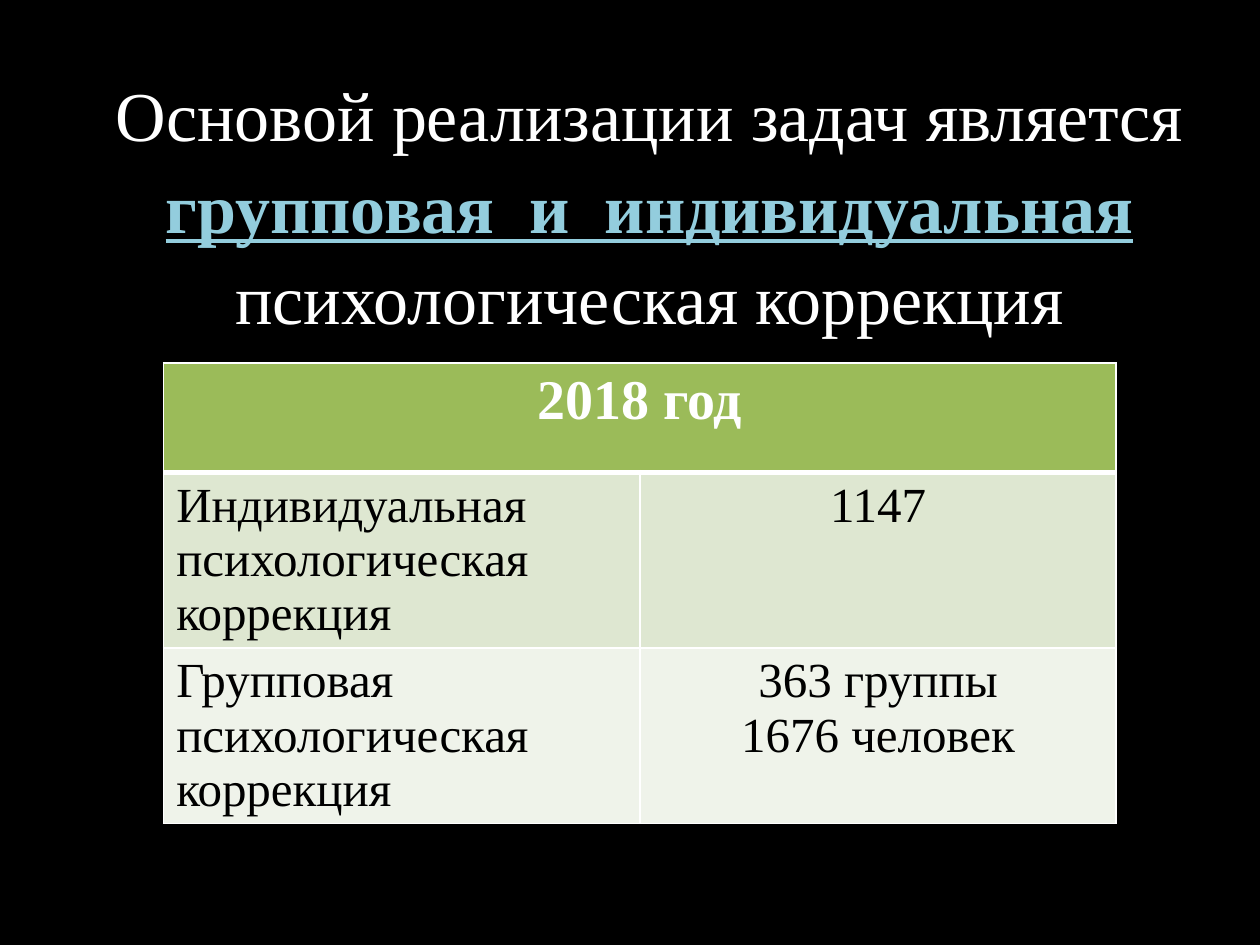
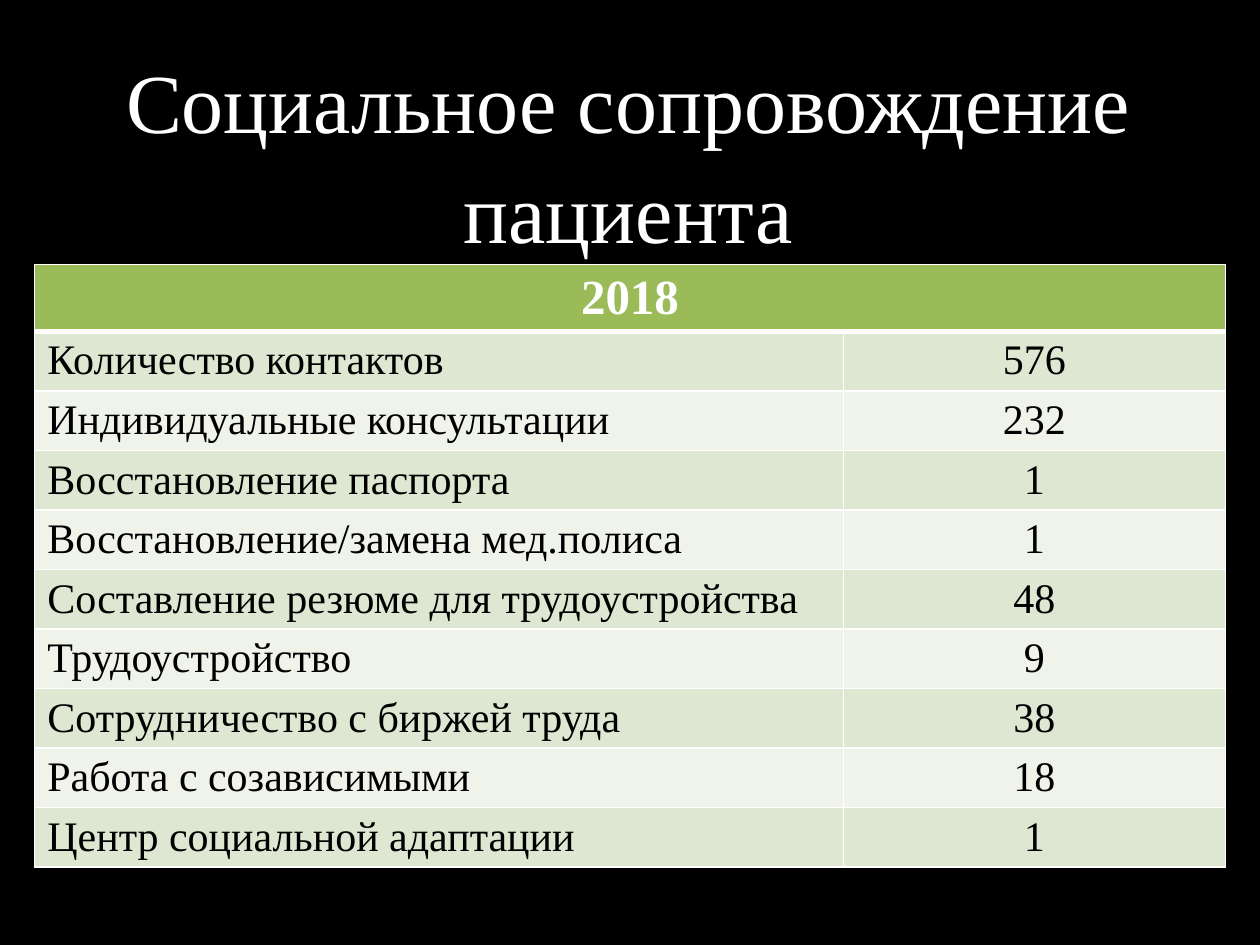
from lxml.etree import SubElement
from pptx import Presentation
from pptx.dml.color import RGBColor
from pptx.enum.text import MSO_ANCHOR, MSO_AUTO_SIZE, PP_ALIGN
from pptx.oxml.ns import qn
from pptx.util import Cm, Pt

FONT = "Times New Roman"
COLORS = {
    "background": "000000",
    "title": "FFFFFF",
    "accent": "93CDDD",
    "header": "9BBB59",
    "header_text": "FFFFFF",
    "band_dark": "DEE7D1",
    "band_light": "EFF3EA",
    "cell_text": "000000",
    "border": "FFFFFF",
}


def rgb(name):
    return RGBColor.from_string(COLORS[name])


def style_run(r, size, color, bold=False, underline=False):
    r.font.name = FONT
    r.font.size = Pt(size)
    r.font.color.rgb = rgb(color)
    r.font.bold = bold
    r.font.underline = underline


def add_title(s, box, size, parts):
    """Fill the title with (text, is_accent) parts."""
    sp = s.shapes.title
    sp.left, sp.top, sp.width, sp.height = (Cm(v) for v in box)
    tf = sp.text_frame
    tf.word_wrap = True
    tf.auto_size = MSO_AUTO_SIZE.NONE
    tf.vertical_anchor = MSO_ANCHOR.MIDDLE
    p = tf.paragraphs[0]
    p.alignment = PP_ALIGN.CENTER
    p.line_spacing = 1.09
    for text, accent in parts:
        r = p.add_run()
        r.text = text
        style_run(r, size, "accent" if accent else "title", accent, accent)


def set_borders(cell, top=1, bottom=1):
    """Draw the four sides of a cell; widths are in points."""
    tc_pr = cell._tc.get_or_add_tcPr()
    for side, width in (("L", 1), ("R", 1), ("T", top), ("B", bottom)):
        ln = SubElement(tc_pr, qn(f"a:ln{side}"), w=str(Pt(width)))
        fill = SubElement(ln, qn("a:solidFill"))
        SubElement(fill, qn("a:srgbClr"), val=COLORS["border"])


def fill_cell(cell, text, fill, size, color, align, bold=False):
    cell.fill.solid()
    cell.fill.fore_color.rgb = rgb(fill)
    cell.text_frame.text = text
    for p in cell.text_frame.paragraphs:
        p.alignment = align
        for r in p.runs:
            style_run(r, size, color, bold)


def add_year_table(s, left, top, widths, heights, sizes, year, rows):
    """Add a year header over label/value rows; heights and sizes are (header, row)."""
    header_height, row_height = heights
    header_size, row_size = sizes
    total_height = header_height + row_height * len(rows)
    table = s.shapes.add_table(len(rows) + 1, 2, Cm(left), Cm(top),
                               Cm(sum(widths)), Cm(total_height)).table
    for column, width in zip(table.columns, widths):
        column.width = Cm(width)
    for i, row in enumerate(table.rows):
        row.height = Cm(row_height if i else header_height)
        for cell in row.cells:
            set_borders(cell, top=3 if i == 1 else 1, bottom=1 if i else 3)

    header = table.cell(0, 0)
    header.merge(table.cell(0, 1))
    fill_cell(header, year, "header", header_size, "header_text",
              PP_ALIGN.CENTER, bold=True)
    for i, texts in enumerate(rows, start=1):
        band = "band_dark" if i % 2 else "band_light"
        for j, align in enumerate((PP_ALIGN.LEFT, PP_ALIGN.CENTER)):
            fill_cell(table.cell(i, j), texts[j], band, row_size,
                      "cell_text", align)


def add_correction_slide(prs, layout):
    s = prs.slides.add_slide(layout)
    add_title(s, (1.5, 0, 23.19, 8.13), 40, [
        ("Основой реализации задач является ", False),
        ("групповая  и  индивидуальная ", True),
        ("психологическая коррекция", False),
    ])
    add_year_table(s, 3.3, 7.32, (9.6, 9.6), (2.2, 3.54), (32, 28), "2018 год", [
        ("Индивидуальная психологическая коррекция", "1147"),
        ("Групповая психологическая коррекция", "363 группы\n1676 человек"),
    ])


def add_support_slide(prs, layout):
    s = prs.slides.add_slide(layout)
    add_title(s, (1.9, 1.57, 21.54, 2.92), 48,
              [("Социальное сопровождение пациента", False)])
    add_year_table(s, 0.7, 5.33, (16.3, 7.7), (1.34, 1.2), (28, 24), "2018", [
        ("Количество контактов", "576"),
        ("Индивидуальные консультации", "232"),
        ("Восстановление паспорта", "1"),
        ("Восстановление/замена мед.полиса", "1"),
        ("Составление резюме для трудоустройства", "48"),
        ("Трудоустройство", "9"),
        ("Сотрудничество с биржей труда", "38"),
        ("Работа с созависимыми", "18"),
        ("Центр социальной адаптации", "1"),
    ])


def main():
    prs = Presentation()
    prs.slide_width, prs.slide_height = Cm(25.4), Cm(19.05)
    background = prs.slide_master.background.fill
    background.solid()
    background.fore_color.rgb = rgb("background")
    title_only = prs.slide_layouts.get_by_name("Title Only")
    add_correction_slide(prs, title_only)
    add_support_slide(prs, title_only)
    prs.save("out.pptx")


if __name__ == "__main__":
    main()
